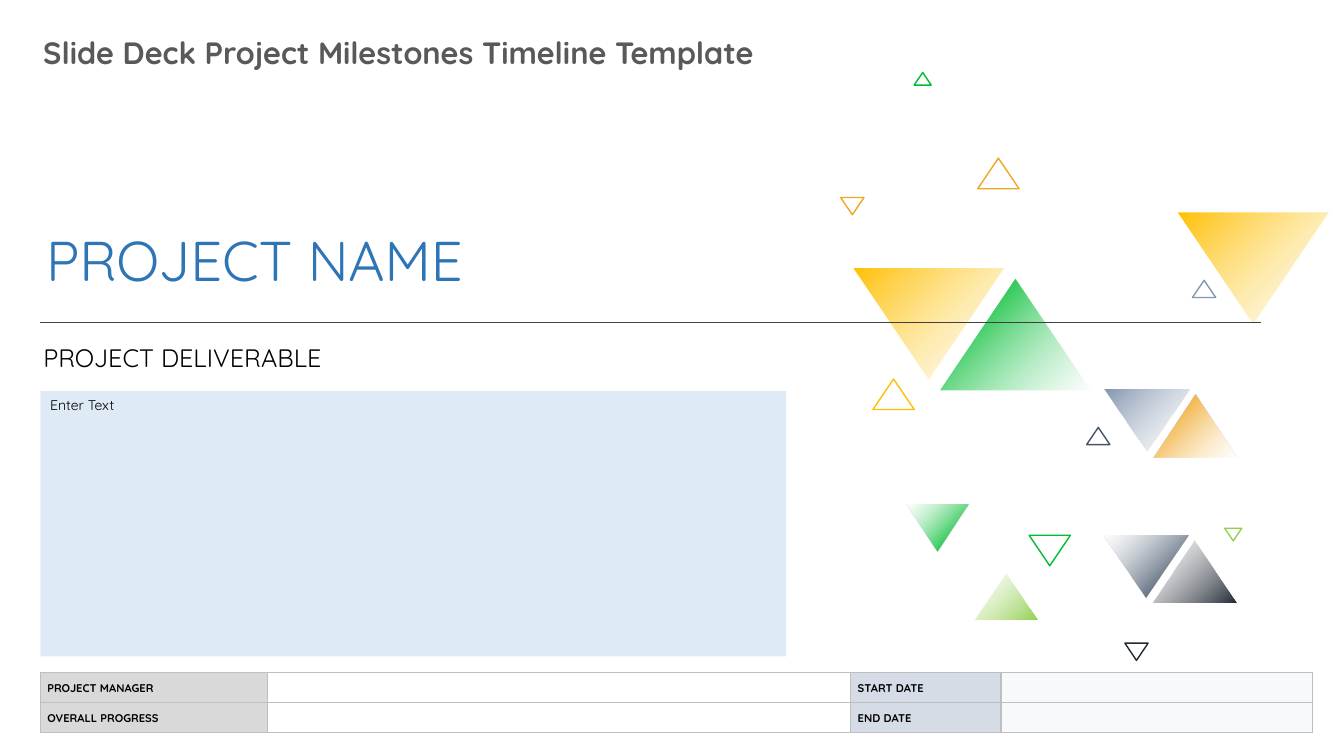
from lxml import etree
from pptx import Presentation
from pptx.dml.color import RGBColor
from pptx.enum.shapes import MSO_CONNECTOR, MSO_SHAPE
from pptx.enum.text import MSO_ANCHOR, PP_ALIGN
from pptx.oxml.ns import qn
from pptx.util import Pt

STRAIGHT = MSO_CONNECTOR.STRAIGHT
TRIANGLE = MSO_SHAPE.ISOSCELES_TRIANGLE
BLOCK = MSO_SHAPE.RECTANGLE
MIDDLE = MSO_ANCHOR.MIDDLE
TOP = MSO_ANCHOR.TOP
LEFT = PP_ALIGN.LEFT

FONT = "Quicksand"
WHITE = "FFFFFF"
SLOPE = 0.74
UP, DOWN = 0, 180

# left, top, width, turn, colour, colour comes first, white edge
FADES = [
    (608.4, 190.8, 110, DOWN, "FFC000", True, True),
    (670.3, 198, 110, UP, "00BD32", False, True),
    (823, 385.9, 60.5, UP, "222A35", True, False),
    (788.4, 382.3, 60.5, DOWN, "44546A", False, False),
    (789.1, 277.9, 60.5, DOWN, "8497B0", True, False),
    (823.7, 282.2, 60.5, UP, "F0A622", False, False),
    (696.2, 409.7, 44.6, UP, "92D050", True, False),
    (647.3, 360.7, 44.6, DOWN, "00BD32", False, False),
    (840.2, 151.2, 110, DOWN, "FFC000", True, True),
]
FRAMES = [
    (735.1, 382.3, 29.5, DOWN, "00BD32"),
    (623.5, 270.7, 29.5, UP, "FFC000"),
    (776.2, 305.3, 16.6, UP, "44546A"),
    (803.5, 459.4, 16.6, DOWN, "222A35"),
    (600.5, 141.1, 16.6, DOWN, "F0A622"),
    (851.8, 200.2, 16.6, UP, "8497B0"),
    (653, 51.8, 12.2, UP, "00BD32"),
    (874.8, 377.3, 12.2, DOWN, "92D050"),
    (698.4, 113, 29.5, UP, "F0A622"),
]
WIDTHS = [162, 416.9, 107.3, 222.5]
FILLS = ["D9D9D9", WHITE, "D6DCE5", "F7F9FB"]
ROWS = [
    ["PROJECT MANAGER", "", "START DATE", ""],
    ["OVERALL PROGRESS", "", "END DATE", ""],
]


def tint(code):
    """Turn a hex string into a colour."""
    return RGBColor.from_string(code)


def write(frame, text, size=10, color="000000", bold=False, space=None):
    """Put one formatted line of text into a frame."""
    frame.word_wrap = True
    line = frame.paragraphs[0]
    line.alignment = LEFT
    line.line_spacing = space
    if not text:
        line._p.get_or_add_endParaRPr().set("sz", str(size * 100))
        return
    run = line.add_run()
    run.text = text
    font = run.font
    font.name, font.size, font.bold = FONT, Pt(size), bold
    font.color.rgb = tint(color)


def label(slide, text, left, top, width, height, **style):
    """Add a text box."""
    box = slide.shapes.add_textbox(Pt(left), Pt(top), Pt(width), Pt(height))
    write(box.text_frame, text, **style)


def shape(slide, kind, left, top, width, height, edge=None):
    """Add a preset shape with an optional edge and no shadow."""
    item = slide.shapes.add_shape(kind, Pt(left), Pt(top), Pt(width), Pt(height))
    item.shadow.inherit = False
    if edge:
        item.line.color.rgb = tint(edge)
        item.line.width = Pt(1)
    else:
        item.line.fill.background()
    return item


def frame(slide, left, top, width, turn, color):
    """Add an outlined triangle."""
    item = shape(slide, TRIANGLE, left, top, width, width * SLOPE, color)
    item.rotation = turn
    item.fill.background()


def fade(slide, left, top, width, turn, color, first, edged):
    """Add a triangle that fades between a colour and clear white."""
    item = shape(slide, TRIANGLE, left, top, width, width * SLOPE,
                 WHITE if edged else None)
    item.rotation = turn
    item.fill.gradient()
    item.fill.gradient_angle = 135
    stops = [(0, color), (1, WHITE)] if first else [(0, WHITE), (0.82, color)]
    for stop, (place, code) in zip(item.fill.gradient_stops, stops):
        stop.position = place
        stop.color.rgb = tint(code)
    for node in item._element.spPr.find(qn("a:gradFill")).iter(qn("a:srgbClr")):
        if node.get("val") == WHITE:
            etree.SubElement(node, qn("a:alpha"), val="50000")


def rule(slide, left, right, top, color):
    """Add a thin level line."""
    line = slide.shapes.add_connector(STRAIGHT, Pt(left), Pt(top), Pt(right), Pt(top))
    line.line.color.rgb = tint(color)
    line.line.width = Pt(0.5)
    etree.SubElement(line._element.spPr, qn("a:effectLst"))


def border(cell, color):
    """Draw all four edges of a table cell."""
    props = cell._tc.get_or_add_tcPr()
    for spot, side in enumerate(("lnL", "lnR", "lnT", "lnB")):
        edge = etree.Element(qn("a:" + side), w=str(Pt(1)))
        paint = etree.SubElement(edge, qn("a:solidFill"))
        etree.SubElement(paint, qn("a:srgbClr"), val=color)
        props.insert(spot, edge)


def grid(slide, left, top, height):
    """Add the table of project facts."""
    table = slide.shapes.add_table(
        len(ROWS), len(WIDTHS), Pt(left), Pt(top), Pt(sum(WIDTHS)),
        Pt(height * len(ROWS))).table
    table.first_row = table.horz_banding = False
    for column, width in zip(table.columns, WIDTHS):
        column.width = Pt(width)
    for row, texts in zip(table.rows, ROWS):
        row.height = Pt(height)
        for cell, text, fill in zip(row.cells, texts, FILLS):
            cell.fill.solid()
            cell.fill.fore_color.rgb = tint(fill)
            cell.vertical_anchor = MIDDLE
            cell.margin_left = cell.margin_right = Pt(5)
            cell.margin_top = cell.margin_bottom = 0
            write(cell.text_frame, text, size=8, bold=True, space=1.07)
            border(cell, "BFBFBF")


def panel(slide, text, left, top, width, height, fill):
    """Add a filled block with text at its top left."""
    item = shape(slide, BLOCK, left, top, width, height)
    item.fill.solid()
    item.fill.fore_color.rgb = tint(fill)
    item.text_frame.vertical_anchor = TOP
    write(item.text_frame, text)


def main():
    """Build and save the slide."""
    deck = Presentation()
    deck.slide_width, deck.slide_height = Pt(960), Pt(540)
    slide = deck.slides.add_slide(deck.slide_layouts[6])
    for item in FADES:
        fade(slide, *item)
    for item in FRAMES:
        frame(slide, *item)
    label(slide, "Slide Deck Project Milestones Timeline Template",
          23.8, 20.2, 643.7, 33.8, size=22, color="595959", bold=True)
    label(slide, "PROJECT NAME", 25.9, 157.7, 883.4, 55.4, size=40, color="2E75B6")
    rule(slide, 28.8, 900.7, 230.4, "404040")
    grid(slide, 28.8, 480.2, 21.6)
    label(slide, "PROJECT DELIVERABLE", 23.8, 241.2, 219.6, 28.8, size=18)
    panel(slide, "Enter Text", 28.8, 279.4, 532.8, 189.4, "DEEBF7")
    deck.save("out.pptx")


if __name__ == "__main__":
    main()
